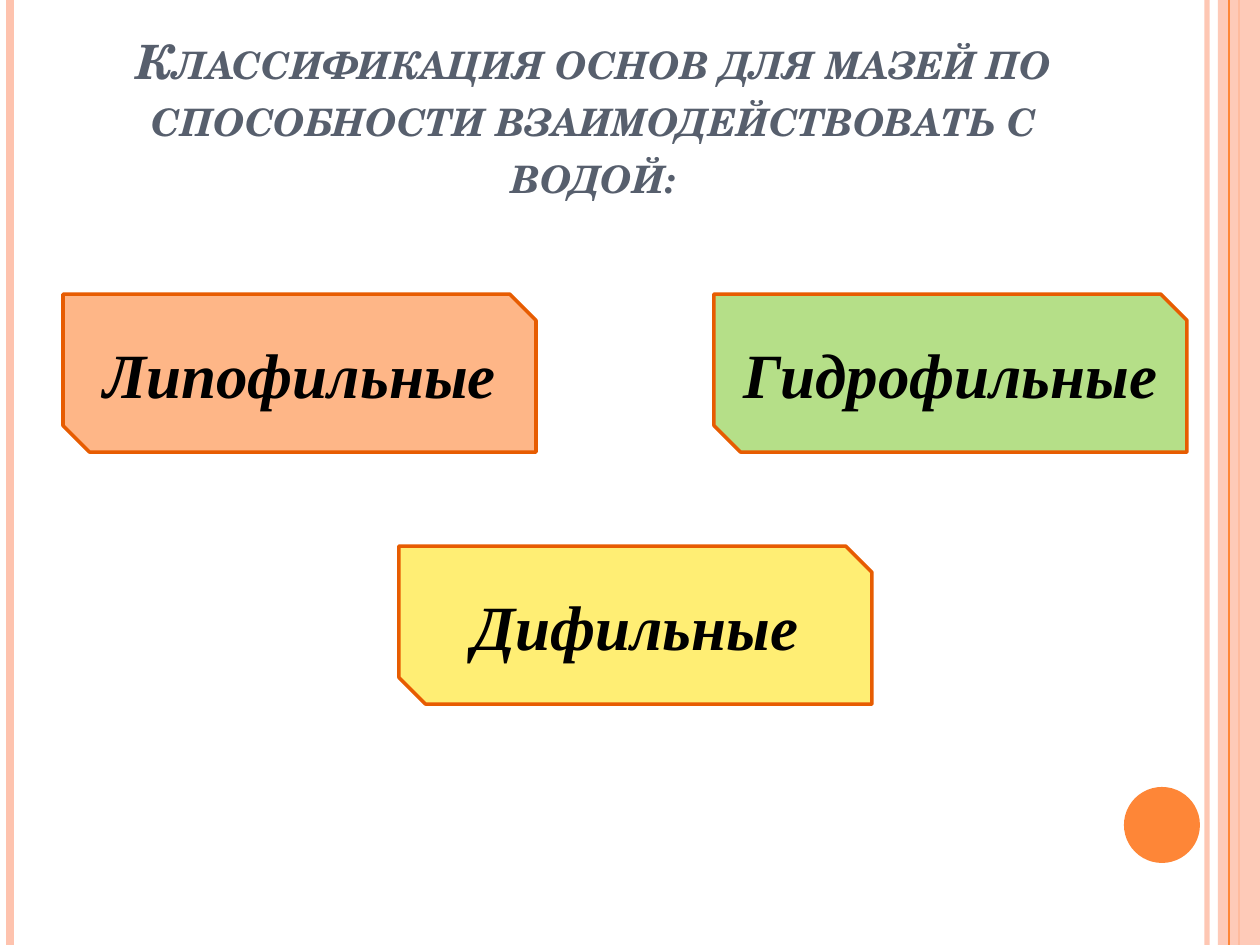
from lxml.etree import SubElement
from pptx import Presentation
from pptx.dml.color import RGBColor
from pptx.enum.shapes import MSO_CONNECTOR, MSO_SHAPE
from pptx.enum.text import MSO_ANCHOR, MSO_AUTO_SIZE, PP_ALIGN
from pptx.oxml.ns import qn
from pptx.util import Emu, Pt

PIXEL = 914400 / 126
WIDTH, HEIGHT = 1260, 945
COLORS = {
    "pale": "FEC3AE",
    "orange": "FE8637",
    "outline": "E75C01",
    "title": "575F6D",
    "text": "000000",
    "lipophilic": "FEB687",
    "diphilic": "FFEE74",
    "hydrophilic": "92D050",
}


def px(length):
    return Emu(round(length * PIXEL))


def color(name):
    return RGBColor.from_string(COLORS[name])


def set_opacity(fill_format_owner, percent):
    """Make the solid fill of a shape or line element partly transparent."""
    srgb = fill_format_owner.find(qn("a:solidFill")).find(qn("a:srgbClr"))
    SubElement(srgb, qn("a:alpha")).set("val", str(percent * 1000))


def format_paragraph(paragraph, font_name, size, color_name):
    paragraph.alignment = PP_ALIGN.CENTER
    font = paragraph.font
    font.name, font.size = font_name, Pt(size)
    font.bold = font.italic = True
    font.color.rgb = color(color_name)


def add_stripe(slide, x, color_name, width, opacity=100):
    """Add a vertical line over the full height of the slide."""
    line = slide.shapes.add_connector(
        MSO_CONNECTOR.STRAIGHT, px(x), 0, px(x), px(HEIGHT))
    line.line.color.rgb = color(color_name)
    line.line.width = Pt(width)
    properties = line._element.spPr
    SubElement(properties, qn("a:effectLst"))
    if opacity < 100:
        set_opacity(properties.find(qn("a:ln")), opacity)


def add_filled_shape(slide, kind, box, color_name, opacity=100):
    shape = slide.shapes.add_shape(kind, *map(px, box))
    shape.shadow.inherit = False
    shape.fill.solid()
    shape.fill.fore_color.rgb = color(color_name)
    shape.line.fill.background()
    if opacity < 100:
        set_opacity(shape._element.spPr, opacity)
    return shape


def add_category(slide, text, x, y, color_name, opacity=100):
    shape = add_filled_shape(
        slide, MSO_SHAPE.SNIP_2_DIAG_RECTANGLE, (x, y, 473, 158),
        color_name, opacity)
    shape.adjustments[0] = 0
    shape.adjustments[1] = 0.167
    shape.line.color.rgb = color("outline")
    shape.line.width = Pt(2)
    frame = shape.text_frame
    frame.text = text
    frame.vertical_anchor = MSO_ANCHOR.MIDDLE
    format_paragraph(frame.paragraphs[0], "Times New Roman", 36, "text")


def fill_title(slide, text):
    title = slide.shapes.title
    title.left, title.top, title.width, title.height = map(
        px, (95, 32, 998, 231))
    frame = title.text_frame
    frame.text = text
    frame.word_wrap = True
    frame.auto_size = MSO_AUTO_SIZE.NONE
    frame.vertical_anchor = MSO_ANCHOR.BOTTOM
    frame.margin_bottom = px(60)
    paragraph = frame.paragraphs[0]
    format_paragraph(paragraph, "TeX Gyre Schola", 27, "title")
    paragraph._p.pPr.find(qn("a:defRPr")).set("cap", "small")


def add_decoration(slide):
    add_stripe(slide, 1207, "pale", 3, 93)
    add_stripe(slide, 10, "pale", 4.5)
    add_stripe(slide, 1239, "orange", 1.5)
    add_filled_shape(
        slide, MSO_SHAPE.RECTANGLE, (1218, 0, 42, HEIGHT), "pale", 87)
    add_stripe(slide, 1229, "orange", 0.75)
    add_filled_shape(slide, MSO_SHAPE.OVAL, (1124, 787, 76, 76), "orange")


def main():
    presentation = Presentation()
    presentation.slide_width, presentation.slide_height = px(WIDTH), px(HEIGHT)
    slide = presentation.slides.add_slide(presentation.slide_layouts[5])
    add_decoration(slide)
    fill_title(slide, "Классификация основ для мазей по способности "
                      "взаимодействовать с водой:")
    add_category(slide, "Липофильные", 63, 294, "lipophilic")
    add_category(slide, "Дифильные", 399, 546, "diphilic")
    add_category(slide, "Гидрофильные", 714, 294, "hydrophilic", 68)
    presentation.save("out.pptx")


if __name__ == "__main__":
    main()
